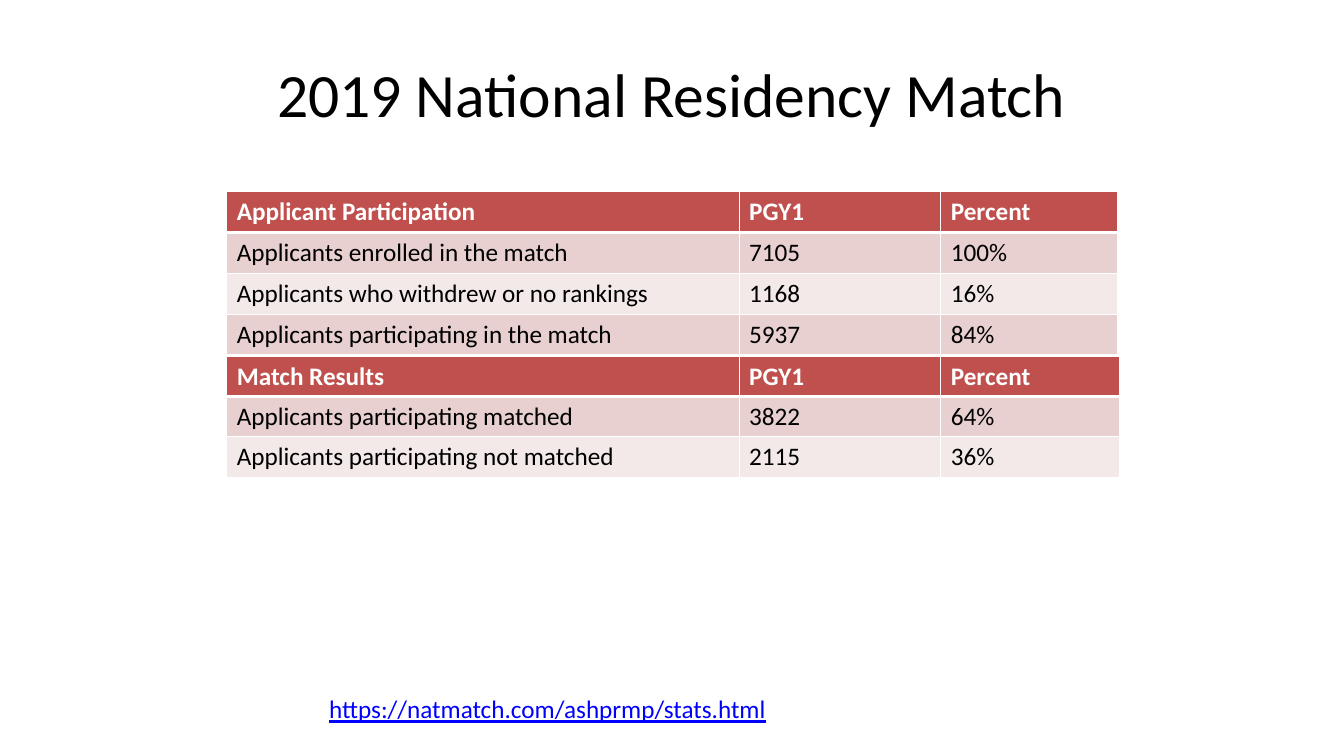
from dataclasses import dataclass

from lxml import etree
from pptx import Presentation
from pptx.dml.color import RGBColor
from pptx.enum.text import MSO_ANCHOR, PP_ALIGN
from pptx.oxml.ns import qn
from pptx.util import Pt

LEFT, CENTER = PP_ALIGN.LEFT, PP_ALIGN.CENTER
TOP, MIDDLE = MSO_ANCHOR.TOP, MSO_ANCHOR.MIDDLE
BLANK_LAYOUT = 6


@dataclass(frozen=True)
class Theme:
    font: str = "Calibri"
    title_size: float = 44
    body_size: float = 18
    ink: str = "000000"
    white: str = "FFFFFF"
    header: str = "C0504D"
    bands: tuple = ("E8D0D0", "F4E9E9")
    link: str = "0000FF"
    rule: float = 1
    header_rule: float = 3


def write(frame, text, *, theme, size, color, bold=False, underline=False, align=LEFT):
    paragraph = frame.paragraphs[0]
    paragraph.alignment = align
    run = paragraph.add_run()
    run.text = text
    run.font.name = theme.font
    run.font.size = Pt(size)
    run.font.bold = bold
    run.font.underline = underline
    run.font.color.rgb = RGBColor.from_string(color)


class SlideBuilder:
    def __init__(self, slide, theme):
        self.slide = slide
        self.theme = theme

    def text(self, content, left, top, width, height, anchor=TOP, **style):
        box = self.slide.shapes.add_textbox(Pt(left), Pt(top), Pt(width), Pt(height))
        box.text_frame.word_wrap = True
        box.text_frame.vertical_anchor = anchor
        write(box.text_frame, content, theme=self.theme, **style)

    def borders(self, cell, top, bottom):
        properties = cell._tc.get_or_add_tcPr()
        widths = {"L": self.theme.rule, "R": self.theme.rule, "T": top, "B": bottom}
        for index, (side, width) in enumerate(widths.items()):
            line = etree.Element(qn(f"a:ln{side}"), w=str(Pt(width)))
            fill = etree.SubElement(line, qn("a:solidFill"))
            etree.SubElement(fill, qn("a:srgbClr"), val=self.theme.white)
            properties.insert(index, line)

    def table(self, rows, left, top, column_widths, row_height):
        theme = self.theme
        table = self.slide.shapes.add_table(
            len(rows), len(column_widths), Pt(left), Pt(top),
            Pt(sum(column_widths)), Pt(row_height * len(rows)),
        ).table
        for column, width in zip(table.columns, column_widths):
            column.width = Pt(width)
        for r, values in enumerate(rows):
            table.rows[r].height = Pt(row_height)
            is_header = r == 0
            fill = theme.header if is_header else theme.bands[(r - 1) % 2]
            for c, value in enumerate(values):
                cell = table.cell(r, c)
                cell.fill.solid()
                cell.fill.fore_color.rgb = RGBColor.from_string(fill)
                self.borders(
                    cell,
                    top=theme.header_rule if r == 1 else theme.rule,
                    bottom=theme.header_rule if is_header else theme.rule,
                )
                write(cell.text_frame, value, theme=theme, size=theme.body_size,
                      color=theme.white if is_header else theme.ink, bold=is_header)


def main():
    theme = Theme()
    deck = Presentation()
    deck.slide_width, deck.slide_height = Pt(960), Pt(540)
    slide = deck.slides.add_slide(deck.slide_layouts[BLANK_LAYOUT])
    builder = SlideBuilder(slide, theme)

    builder.text("2019 National Residency Match", 48, 21.6, 864, 90, anchor=MIDDLE,
                 size=theme.title_size, color=theme.ink, align=CENTER)

    participation = [
        ("Applicant Participation", "PGY1", "Percent"),
        ("Applicants enrolled in the match", "7105", "100%"),
        ("Applicants who withdrew or no rankings", "1168", "16%"),
        ("Applicants participating in the match", "5937", "84%"),
    ]
    results = [
        ("Match Results", "PGY1", "Percent"),
        ("Applicants participating matched", "3822", "64%"),
        ("Applicants participating not matched", "2115", "36%"),
    ]
    builder.table(participation, 162, 136.8, (366, 144, 126), 29.2)
    builder.table(results, 162, 254.4, (366, 144, 128), 28.8)

    builder.text("https://natmatch.com/ashprmp/stats.html", 228, 492, 582, 29,
                 size=theme.body_size, color=theme.link, underline=True)
    deck.save("out.pptx")


if __name__ == "__main__":
    main()
